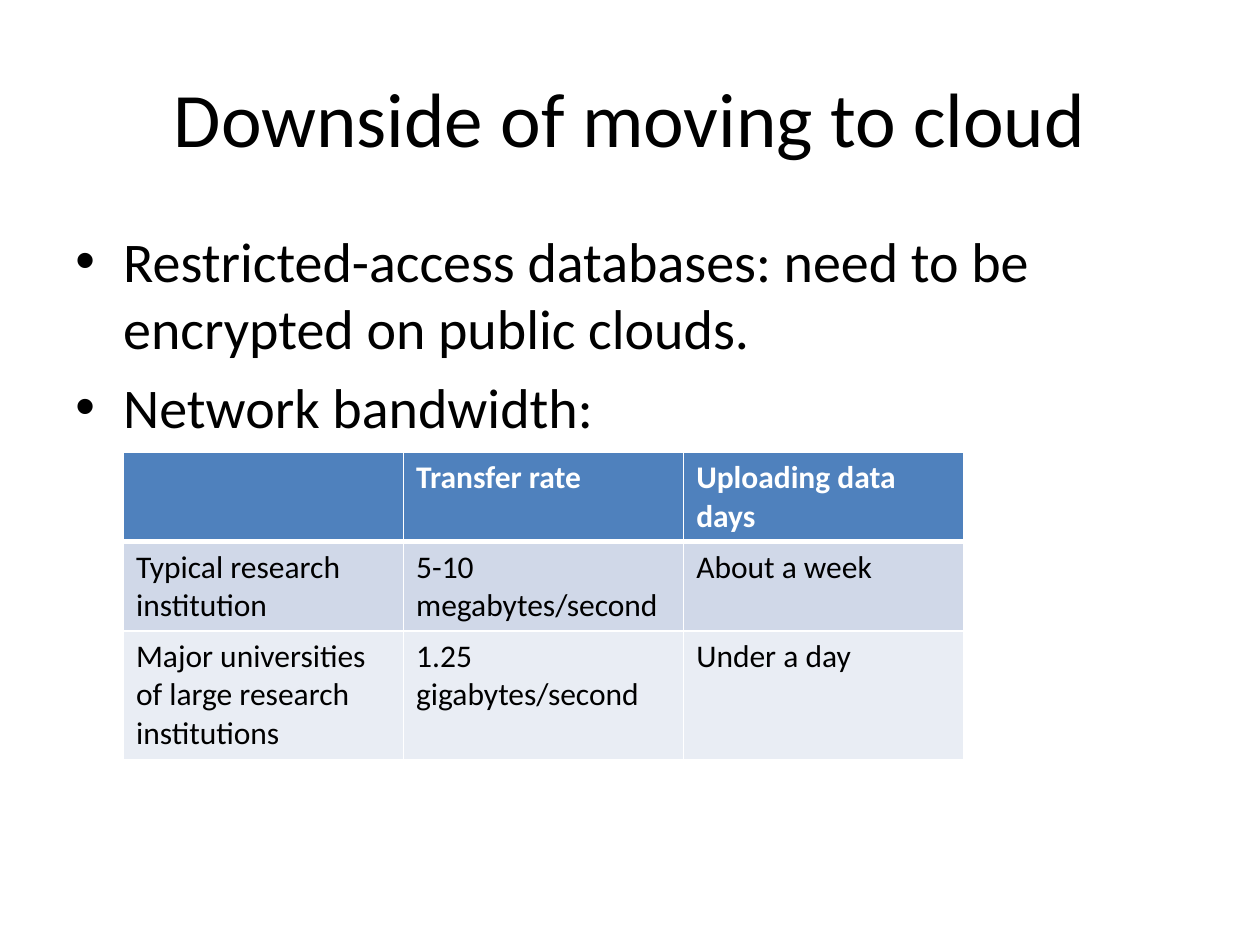
from lxml import etree
from pptx import Presentation, util as u
from pptx.dml.color import RGBColor
from pptx.enum import text
from pptx.oxml import ns

ROWS = [
    ["", "Transfer rate", "Uploading data days"],
    ["Typical research institution", "5-10 megabytes/second", "About a week"],
    ["Major universities of large research institutions",
     "1.25 gigabytes/second", "Under a day"],
]
ROW_FILLS = ["4F81BD", "D0D8E8", "E9EDF4"]
ROW_HEIGHTS = [0.71, 0.71, 1.02]
BULLETS = [
    "Restricted-access databases: need to be encrypted on public clouds.",
    "Network bandwidth:",
]


def color(value):
    """Turn a hex string into a colour."""
    return RGBColor.from_string(value)


def write(para, words, size=18, ink="000000", bold=False, align=text.PP_ALIGN.LEFT):
    """Add formatted words to a paragraph."""
    para.alignment = align
    span = para.add_run()
    span.text = words
    span.font.name = "Calibri"
    span.font.size = u.Pt(size)
    span.font.bold = bold
    span.font.color.rgb = color(ink)


def add_box(page, left, top, width, height, anchor=text.MSO_ANCHOR.TOP):
    """Add a wrapping text box and return its text frame."""
    box = page.shapes.add_textbox(*map(u.Inches, (left, top, width, height)))
    frame = box.text_frame
    frame.word_wrap = True
    frame.vertical_anchor = anchor
    return frame


def add_bullet(para, words):
    """Write one bulleted paragraph with a hanging indent."""
    write(para, words, size=32)
    para.space_before = u.Pt(6.4)
    props = para._p.get_or_add_pPr()
    indent = u.Inches(0.38)
    props.set("marL", str(indent))
    props.set("indent", str(-indent))
    etree.SubElement(props, ns.qn("a:buFont"), typeface="Arial")
    etree.SubElement(props, ns.qn("a:buChar"), char="•")


def add_border(cell, side, width, ink="FFFFFF"):
    """Draw one side of a table cell."""
    line = etree.SubElement(cell._tc.get_or_add_tcPr(), ns.qn(f"a:ln{side}"),
                            w=str(u.Pt(width)))
    fill = etree.SubElement(line, ns.qn("a:solidFill"))
    etree.SubElement(fill, ns.qn("a:srgbClr"), val=ink)


def fill_cell(cell, words, row):
    """Format one table cell, with the first row as header."""
    widths = {"L": 1, "R": 1, "T": 3 if row == 1 else 1, "B": 3 if row == 0 else 1}
    for side, width in widths.items():
        add_border(cell, side, width)
    cell.fill.solid()
    cell.fill.fore_color.rgb = color(ROW_FILLS[row])
    para = cell.text_frame.paragraphs[0]
    if words:
        write(para, words, ink="000000" if row else "FFFFFF", bold=row == 0)


def add_rates(page):
    """Add the table of transfer rates."""
    table = page.shapes.add_table(
        len(ROWS), len(ROWS[0]), u.Inches(0.98), u.Inches(3.59),
        u.Inches(6.67), u.Inches(sum(ROW_HEIGHTS))).table
    for row, (words, height) in enumerate(zip(ROWS, ROW_HEIGHTS)):
        table.rows[row].height = u.Inches(height)
        for column, entry in enumerate(words):
            fill_cell(table.cell(row, column), entry, row)


def main():
    """Build and save the slide."""
    deck = Presentation()
    deck.slide_width, deck.slide_height = u.Inches(10), u.Inches(7.5)
    page = deck.slides.add_slide(deck.slide_layouts[6])
    title = add_box(page, 0.5, 0.3, 9, 1.25, anchor=text.MSO_ANCHOR.MIDDLE)
    write(title.paragraphs[0], "Downside of moving to cloud", size=44,
          align=text.PP_ALIGN.CENTER)
    body = add_box(page, 0.5, 1.75, 9, 4.95)
    for index, words in enumerate(BULLETS):
        add_bullet(body.add_paragraph() if index else body.paragraphs[0], words)
    add_rates(page)
    deck.save("out.pptx")


if __name__ == "__main__":
    main()
